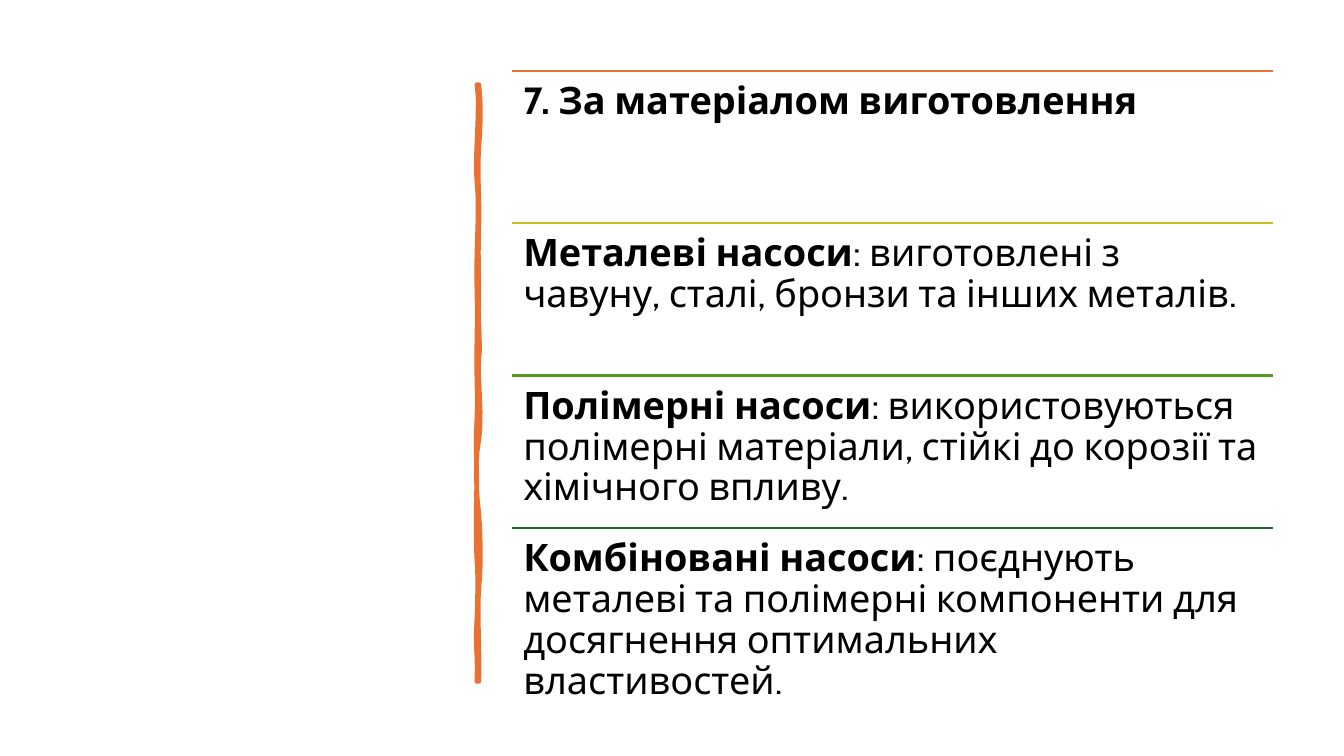
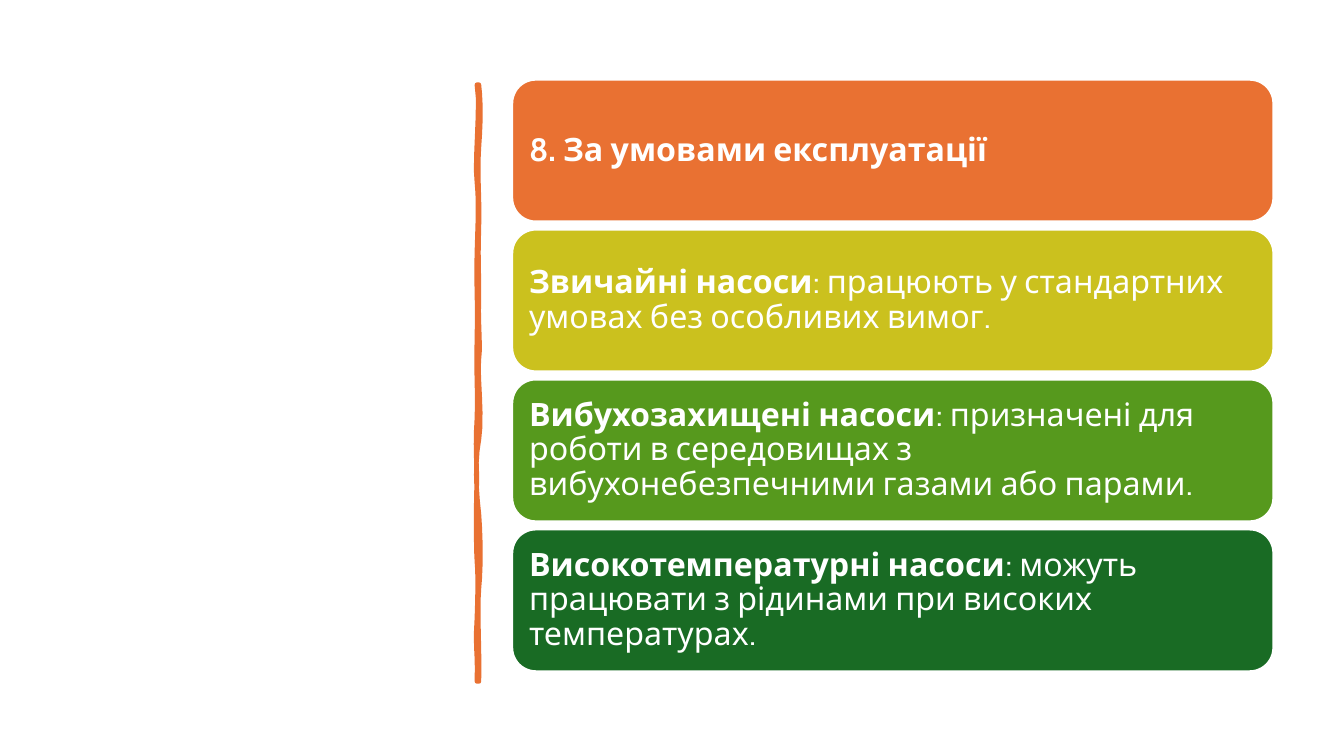
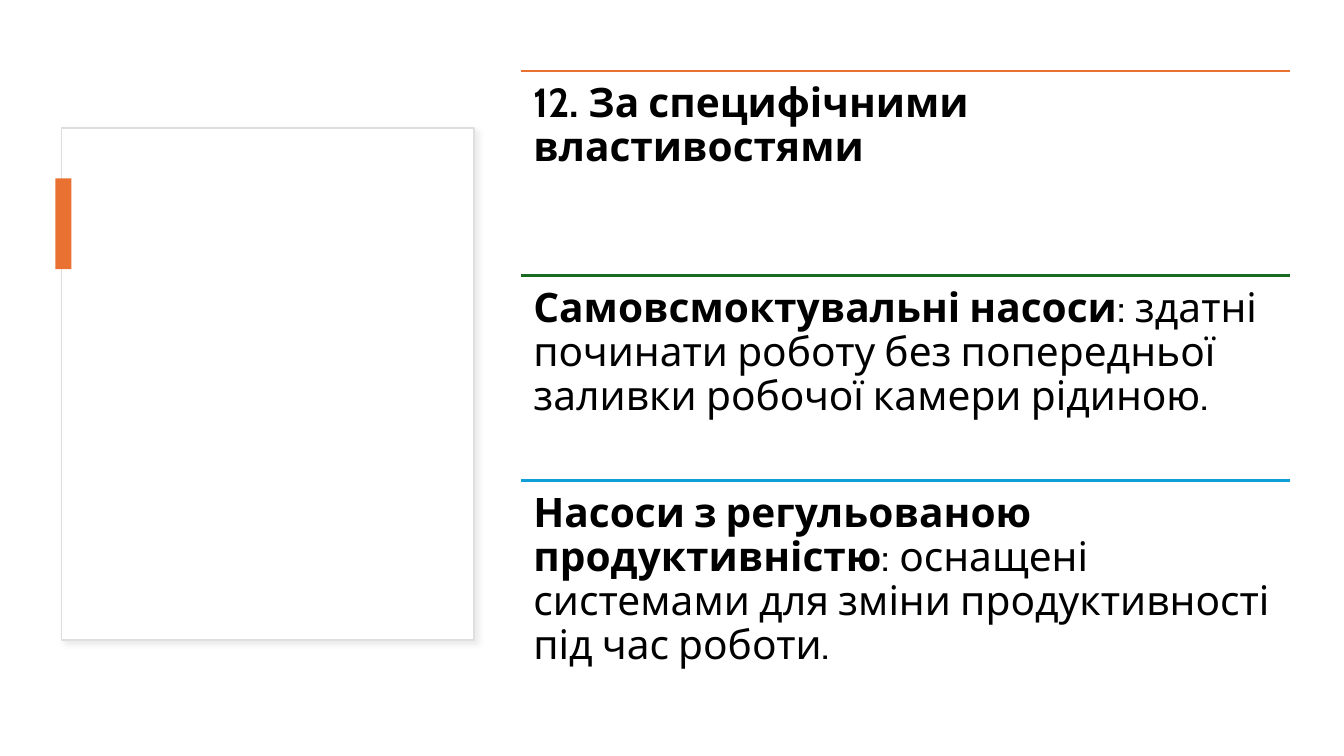
from dataclasses import dataclass
from typing import NamedTuple

from lxml.etree import SubElement
from pptx import Presentation
from pptx.dml.color import RGBColor
from pptx.enum.shapes import MSO_CONNECTOR, MSO_SHAPE
from pptx.enum.text import MSO_ANCHOR as ANCHOR, PP_ALIGN as ALIGN
from pptx.oxml.ns import qn
from pptx.util import Inches, Pt

SLIDE_W, SLIDE_H = 13.33, 7.5
FONT = "Cabin"
BLACK = RGBColor(0x00, 0x00, 0x00)
WHITE = RGBColor(0xFF, 0xFF, 0xFF)
ORANGE = RGBColor(0xE9, 0x71, 0x32)
YELLOW = RGBColor(0xCB, 0xC1, 0x1E)
LIME = RGBColor(0x56, 0x99, 0x1D)
GREEN = RGBColor(0x19, 0x6B, 0x24)
BLUE = RGBColor(0x0F, 0x9E, 0xD5)
FRAME_GREY = RGBColor(0xDE, 0xDE, 0xDE)


class Item(NamedTuple):
    color: RGBColor
    term: str
    rest: str = ""


class Curve(NamedTuple):
    x1: float
    y1: float
    x2: float
    y2: float
    x: float
    y: float


@dataclass(frozen=True)
class Rows:
    left: float
    top: float
    width: float
    height: float
    count: int
    gap: float = 0

    @property
    def row_height(self) -> float:
        return (self.height - self.gap * (self.count - 1)) / self.count

    def row_top(self, i: int) -> float:
        return self.top + i * (self.row_height + self.gap)


@dataclass(frozen=True)
class TextStyle:
    size: int
    color: RGBColor
    inset: float
    anchor: ANCHOR = ANCHOR.TOP


MATERIALS = [
    Item(ORANGE, "7. За матеріалом виготовлення"),
    Item(YELLOW, "Металеві насоси", ": виготовлені з чавуну, сталі, бронзи та інших металів."),
    Item(LIME, "Полімерні насоси",
         ": використовуються полімерні матеріали, стійкі до корозії та хімічного впливу."),
    Item(GREEN, "Комбіновані насоси",
         ": поєднують металеві та полімерні компоненти для досягнення оптимальних властивостей."),
]
CONDITIONS = [
    Item(ORANGE, "8. За умовами експлуатації"),
    Item(YELLOW, "Звичайні насоси", ": працюють у стандартних умовах без особливих вимог."),
    Item(LIME, "Вибухозахищені насоси",
         ": призначені для роботи в середовищах з вибухонебезпечними газами або парами."),
    Item(GREEN, "Високотемпературні насоси",
         ": можуть працювати з рідинами при високих температурах."),
]
PROPERTIES = [
    Item(ORANGE, "12. За специфічними властивостями"),
    Item(GREEN, "Самовсмоктувальні насоси",
         ": здатні починати роботу без попередньої заливки робочої камери рідиною."),
    Item(BLUE, "Насоси з регульованою продуктивністю",
         ": оснащені системами для зміни продуктивності під час роботи."),
]

SPINE_START = (4.75, 0.84)
SPINE = [
    Curve(4.77, 1.02, 4.77, 1.19, 4.75, 1.46),
    Curve(4.73, 1.73, 4.76, 1.95, 4.75, 2.26),
    Curve(4.74, 2.57, 4.75, 2.62, 4.75, 2.94),
    Curve(4.74, 3.25, 4.77, 3.42, 4.75, 3.56),
    Curve(4.73, 3.7, 4.79, 4.14, 4.75, 4.36),
    Curve(4.71, 4.57, 4.72, 4.84, 4.75, 5.1),
    Curve(4.77, 5.36, 4.77, 5.64, 4.75, 5.84),
    Curve(4.73, 6.03, 4.76, 6.5, 4.75, 6.76),
    Curve(4.74, 6.76, 4.73, 6.76, 4.73, 6.76),
    Curve(4.74, 6.46, 4.71, 6.44, 4.73, 6.13),
    Curve(4.74, 5.83, 4.74, 5.7, 4.73, 5.57),
    Curve(4.72, 5.44, 4.72, 4.95, 4.73, 4.77),
    Curve(4.73, 4.59, 4.71, 4.45, 4.73, 4.15),
    Curve(4.74, 3.86, 4.72, 3.73, 4.73, 3.35),
    Curve(4.74, 2.98, 4.72, 2.81, 4.73, 2.5),
    Curve(4.74, 2.18, 4.75, 2, 4.73, 1.81),
    Curve(4.7, 1.63, 4.77, 1.04, 4.73, 0.84),
]


def curve_points(start: tuple, curves: list, steps: int = 6) -> list:
    points = []
    x0, y0 = start
    for c in curves:
        for k in range(1, steps + 1):
            t = k / steps
            u = 1 - t
            w0, w1, w2, w3 = u ** 3, 3 * u * u * t, 3 * u * t * t, t ** 3
            points.append((Inches(w0 * x0 + w1 * c.x1 + w2 * c.x2 + w3 * c.x),
                           Inches(w0 * y0 + w1 * c.y1 + w2 * c.y2 + w3 * c.y)))
        x0, y0 = c.x, c.y
    return points


def paint(sp, fill: RGBColor, line: RGBColor | None = None, width: float = 1) -> None:
    sp.shadow.inherit = False
    sp.fill.solid()
    sp.fill.fore_color.rgb = fill
    if line is None:
        sp.line.fill.background()
    else:
        sp.line.color.rgb = line
        sp.line.width = Pt(width)


def add_spine(s) -> None:
    builder = s.shapes.build_freeform(*(Inches(v) for v in SPINE_START), scale=1.0)
    builder.add_line_segments(curve_points(SPINE_START, SPINE), close=True)
    sp = builder.convert_to_shape()
    paint(sp, ORANGE, ORANGE, 3.25)
    SubElement(sp.line._get_or_add_ln(), qn("a:round"))


def add_rule(s, left: float, top: float, width: float, color: RGBColor) -> None:
    x, y = Inches(left), Inches(top)
    rule = s.shapes.add_connector(MSO_CONNECTOR.STRAIGHT, x, y, x + Inches(width), y)
    rule.line.color.rgb = color
    rule.line.width = Pt(1.5)
    SubElement(rule._element.spPr, qn("a:effectLst"))


def write_item(sp, item: Item, style: TextStyle) -> None:
    tf = sp.text_frame
    tf.word_wrap = True
    tf.vertical_anchor = style.anchor
    tf.margin_left = tf.margin_right = Inches(style.inset)
    tf.margin_top = tf.margin_bottom = Inches(style.inset)
    p = tf.paragraphs[0]
    p.alignment = ALIGN.LEFT
    p.line_spacing = 0.9
    p.font.name = FONT
    p.font.size = Pt(style.size)
    p.font.color.rgb = style.color
    for text, bold in ((item.term, True), (item.rest, False)):
        if text:
            r = p.add_run()
            r.text = text
            r.font.bold = bold


def add_ruled_list(s, rows: Rows, items: list, style: TextStyle) -> None:
    for i, item in enumerate(items):
        top = rows.row_top(i)
        add_rule(s, rows.left, top, rows.width, item.color)
        box = s.shapes.add_textbox(Inches(rows.left), Inches(top),
                                   Inches(rows.width), Inches(rows.row_height))
        write_item(box, item, style)


def add_card_list(s, rows: Rows, items: list, style: TextStyle) -> None:
    for i, item in enumerate(items):
        card = s.shapes.add_shape(MSO_SHAPE.ROUNDED_RECTANGLE,
                                  Inches(rows.left), Inches(rows.row_top(i)),
                                  Inches(rows.width), Inches(rows.row_height))
        paint(card, item.color, WHITE, 1.5)
        write_item(card, item, style)


def add_frame(s) -> None:
    frame = s.shapes.add_shape(MSO_SHAPE.RECTANGLE, Inches(0.61), Inches(1.27),
                               Inches(4.09), Inches(5.08))
    paint(frame, WHITE, FRAME_GREY)
    effects = frame._element.spPr.find(qn("a:effectLst"))
    shadow = SubElement(effects, qn("a:outerShdw"), blurRad=str(Pt(4)), dist=str(Pt(3)),
                        dir="2700000", algn="tl", rotWithShape="0")
    color = SubElement(shadow, qn("a:srgbClr"), val="D9D9D9")
    SubElement(color, qn("a:alpha"), val="50000")
    tab = s.shapes.add_shape(MSO_SHAPE.RECTANGLE, Inches(0.55), Inches(1.77),
                             Inches(0.16), Inches(0.9))
    paint(tab, ORANGE)


def main() -> None:
    prs = Presentation()
    prs.slide_width, prs.slide_height = Inches(SLIDE_W), Inches(SLIDE_H)
    blank = prs.slide_layouts[6]

    s = prs.slides.add_slide(blank)
    add_spine(s)
    add_ruled_list(s, Rows(5.08, 0.7, 7.55, 6.05, len(MATERIALS)), MATERIALS,
                   TextStyle(27, BLACK, 0.11))

    s = prs.slides.add_slide(blank)
    add_spine(s)
    add_card_list(s, Rows(5.08, 0.79, 7.55, 5.87, len(CONDITIONS), 0.08), CONDITIONS,
                  TextStyle(23, WHITE, 0.1, ANCHOR.MIDDLE))

    s = prs.slides.add_slide(blank)
    add_frame(s)
    add_ruled_list(s, Rows(5.17, 0.7, 7.62, 6.1, len(PROPERTIES)), PROPERTIES,
                   TextStyle(29, BLACK, 0.12))

    prs.save("out.pptx")


if __name__ == "__main__":
    main()
